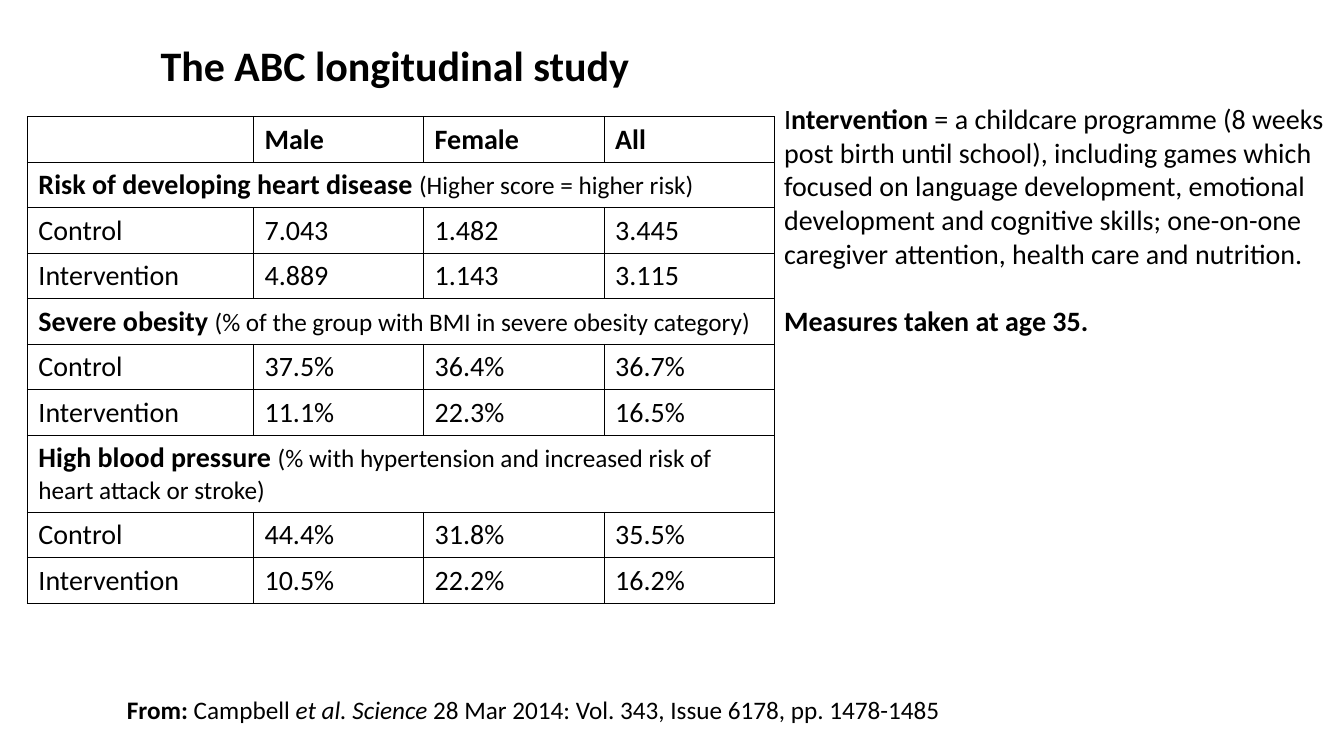
"""Build the slide with the health results of the ABC longitudinal study."""
from pptx import Presentation
from pptx.dml.color import RGBColor
from pptx.enum.text import MSO_ANCHOR as ANCHOR, PP_ALIGN as ALIGN
from pptx.oxml import parse_xml
from pptx.oxml.ns import nsdecls
from pptx.util import Pt

PX = 6350
COLORS = {"text": "000000", "border": "000000", "background": "FFFFFF"}
FONT = "Calibri"


def add_runs(p, runs):
    for text, size, style in runs:
        r = p.add_run()
        r.text = text
        r.font.name = FONT
        r.font.size = Pt(size)
        r.font.bold = style == "bold"
        r.font.italic = style == "italic"
        r.font.color.rgb = RGBColor.from_string(COLORS["text"])


def add_text(slide, box, paragraphs):
    tf = slide.shapes.add_textbox(*[v * PX for v in box]).text_frame
    tf.word_wrap = True
    for i, runs in enumerate(paragraphs):
        p = tf.add_paragraph() if i else tf.paragraphs[0]
        add_runs(p, runs)
    return tf


prs = Presentation()
prs.slide_width, prs.slide_height = 1920 * PX, 1080 * PX
slide = prs.slides.add_slide(prs.slide_layouts[6])
slide.background.fill.solid()
slide.background.fill.fore_color.rgb = RGBColor.from_string(COLORS["background"])

title = add_text(slide, (43, 19, 1043, 118), [[("The ABC longitudinal study", 30, "bold")]])
title.vertical_anchor = ANCHOR.BOTTOM
title.paragraphs[0].alignment = ALIGN.CENTER
title.paragraphs[0].line_spacing = 0.9

rows = [
    ("", "Male", "Female", "All"),
    ("Risk of developing heart disease ", "(Higher score = higher risk)"),
    ("Control", "7.043", "1.482", "3.445"),
    ("Intervention", "4.889", "1.143", "3.115"),
    ("Severe obesity ", "(% of the group with BMI in severe obesity category)"),
    ("Control", "37.5%", "36.4%", "36.7%"),
    ("Intervention", "11.1%", "22.3%", "16.5%"),
    ("High blood pressure ", "(% with hypertension and increased risk of heart attack or stroke)"),
    ("Control", "44.4%", "31.8%", "35.5%"),
    ("Intervention", "10.5%", "22.2%", "16.2%"),
]
col_widths = [323, 243, 258, 243]
row_heights = [65] * 7 + [110] + [65] * 2
table = slide.shapes.add_table(len(rows), len(col_widths), 39 * PX, 167 * PX,
                               sum(col_widths) * PX, sum(row_heights) * PX).table
table.first_row = table.horz_banding = False
for col, width in zip(table.columns, col_widths):
    col.width = width * PX
for row, height in zip(table.rows, row_heights):
    row.height = height * PX

for i, values in enumerate(rows):
    if len(values) == 2:
        heading, detail = values
        table.cell(i, 0).merge(table.cell(i, 3))
        add_runs(table.cell(i, 0).text_frame.paragraphs[0],
                 [(heading, 20, "bold"), (detail, 18, "")])
    else:
        for j, value in enumerate(values):
            if value:
                add_runs(table.cell(i, j).text_frame.paragraphs[0],
                         [(value, 20, "" if i else "bold")])

for cell in table.iter_cells():
    cell.margin_left = cell.margin_right = 16 * PX
    cell.margin_top = cell.margin_bottom = 8 * PX
    tcPr = cell._tc.get_or_add_tcPr()
    for side in ("lnL", "lnR", "lnT", "lnB"):
        tcPr.append(parse_xml(
            f'<a:{side} {nsdecls("a")} w="{Pt(0.75)}"><a:solidFill>'
            f'<a:srgbClr val="{COLORS["border"]}"/></a:solidFill></a:{side}>'))
    cell.fill.background()

notes = add_text(slide, (1106, 138, 815, 402), [
    [("I", 20, ""), ("ntervention", 20, "bold"),
     (" = a childcare programme (8 weeks post birth until school), including games which "
      "focused on language development, emotional development and cognitive skills; "
      "one-on-one caregiver attention, health care and nutrition.", 20, "")],
    [("Measures taken at age 35.", 20, "bold")],
])
notes.paragraphs[1].space_before = Pt(24)

add_text(slide, (167, 985, 1752, 58), [[
    ("From:", 18, "bold"), (" Campbell ", 18, ""), ("et al. Science", 18, "italic"),
    (" 28 Mar 2014: Vol. 343, Issue 6178, pp. 1478-1485", 18, ""),
]])

prs.save("out.pptx")
